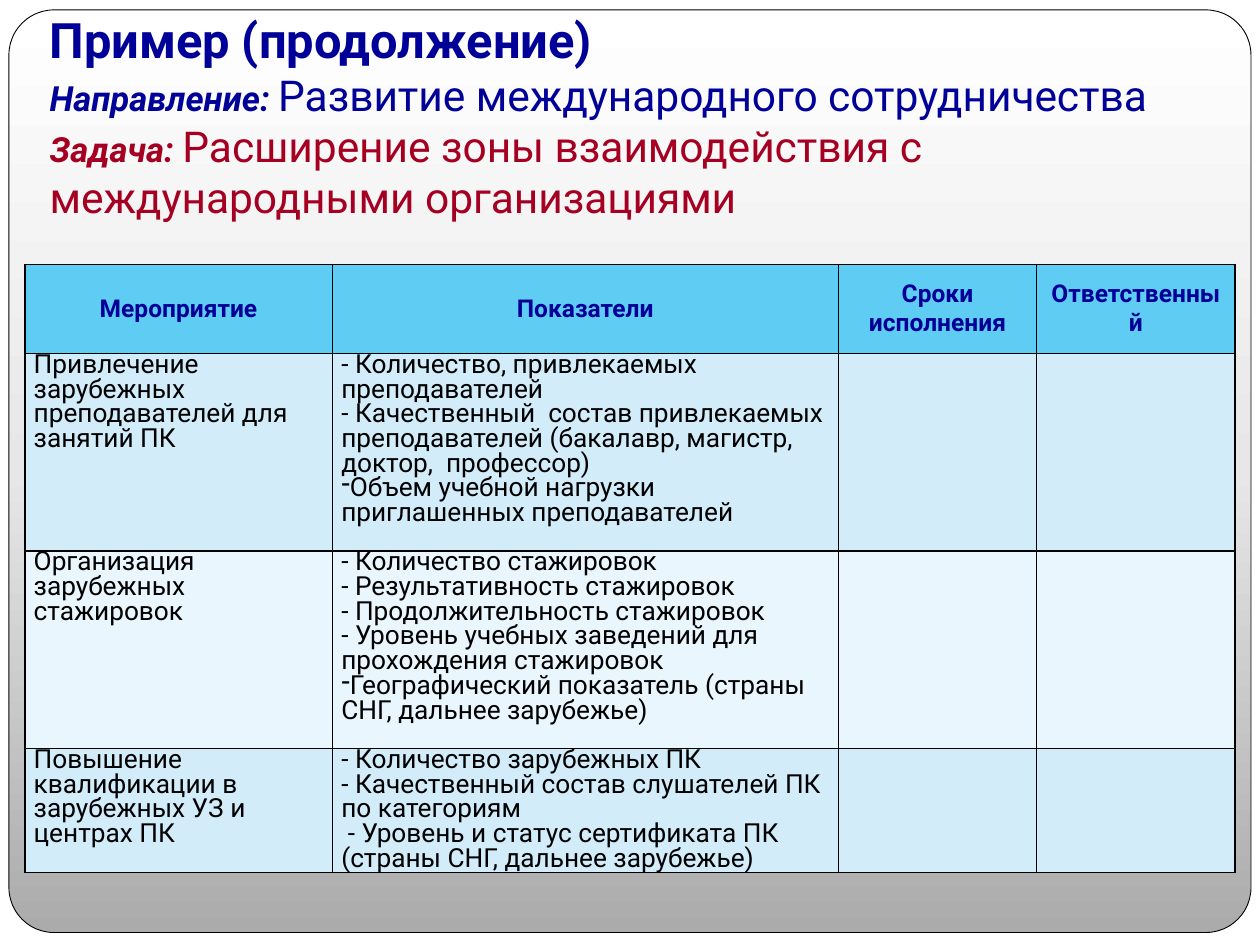
import copy
import dataclasses

import pptx
import pptx.dml.color
import pptx.enum.shapes
import pptx.enum.text
import pptx.oxml
import pptx.oxml.ns
import pptx.util
from pptx.util import Cm

PP_ALIGN = pptx.enum.text.PP_ALIGN
ANCHOR = pptx.enum.text.MSO_ANCHOR


@dataclasses.dataclass(frozen=True)
class Theme:
    font: str = "Roboto"
    navy: str = "000099"
    red: str = "A50021"
    black: str = "000000"
    white: str = "FFFFFF"
    header: str = "5ECCF3"
    bands: tuple = ("D2ECFA", "EAF6FD")
    gradient: tuple = ("ABABAB", "E7E7E7", "FFFFFF")
    title_size: float = 27.9
    label_size: float = 19.8
    topic_size: float = 24.3
    header_size: float = 14
    body_size: float = 15


THEME = Theme()


def rgb(color):
    return pptx.dml.color.RGBColor.from_string(color)


def add_text(p, text, *, size, color, bold=False, italic=False):
    r = p.add_run()
    r.text = text
    r.font.name = THEME.font
    r.font.size = pptx.util.Pt(size)
    r.font.color.rgb = rgb(color)
    r.font.bold = bold
    r.font.italic = italic
    return r


def next_paragraph(tf, index):
    return tf.add_paragraph() if index else tf.paragraphs[0]


class SlideBuilder:
    def __init__(self, prs, theme):
        self.theme = theme
        self.s = prs.slides.add_slide(prs.slide_layouts[5])
        fill = self.s.background.fill
        fill.solid()
        fill.fore_color.rgb = rgb(theme.white)

    def panel(self, left, top, width, height):
        sp = self.s.shapes.add_shape(
            pptx.enum.shapes.MSO_SHAPE.ROUNDED_RECTANGLE, left, top, width, height)
        sp.adjustments[0] = 0.049
        sp.shadow.inherit = False
        sp.line.color.rgb = rgb(self.theme.black)
        sp.line.width = pptx.util.Pt(0.5)
        sp.fill.gradient()
        sp.fill.gradient_angle = 90
        first = sp._element.spPr.find(".//" + pptx.oxml.ns.qn("a:gs"))
        first.addnext(copy.deepcopy(first))
        stops = sp.fill.gradient_stops
        for stop, position, color in zip(stops, (0, 0.5, 1), self.theme.gradient):
            stop.position = position
            stop.color.rgb = rgb(color)
        tree = self.s.shapes._spTree
        tree.remove(sp._element)
        tree.insert(2, sp._element)

    def title(self, lines, left, top, width, height):
        sp = self.s.shapes.title
        sp.left, sp.top, sp.width, sp.height = left, top, width, height
        tf = sp.text_frame
        tf.word_wrap = True
        tf.auto_size = pptx.enum.text.MSO_AUTO_SIZE.NONE
        tf.vertical_anchor = ANCHOR.BOTTOM
        tf.margin_left = tf.margin_right = 0
        tf.margin_top, tf.margin_bottom = Cm(0.13), Cm(0.25)
        for i, runs in enumerate(lines):
            p = next_paragraph(tf, i)
            p.alignment = PP_ALIGN.LEFT
            for text, style in runs:
                add_text(p, text, **style)

    def table(self, header, rows, left, top, widths, heights):
        tbl = self.s.shapes.add_table(
            len(heights), len(widths), left, top, sum(widths), sum(heights)).table
        for column, width in zip(tbl.columns, widths):
            column.width = width
        for row, height in zip(tbl.rows, heights):
            row.height = height
        for j, text in enumerate(header):
            cell = tbl.cell(0, j)
            self.cell_format(cell, self.theme.header)
            cell.vertical_anchor = ANCHOR.MIDDLE
            p = cell.text_frame.paragraphs[0]
            p.alignment = PP_ALIGN.CENTER
            add_text(p, text, size=self.theme.header_size,
                     color=self.theme.navy, bold=True)
        for i, row in enumerate(rows, 1):
            for j in range(len(widths)):
                cell = tbl.cell(i, j)
                self.cell_format(cell, self.theme.bands[(i - 1) % 2])
                self.body_text(cell, row[j] if j < len(row) else [])

    def body_text(self, cell, lines):
        cell.margin_left = cell.margin_right = Cm(0.18)
        cell.margin_top = cell.margin_bottom = 0
        for i, line in enumerate(lines):
            p = next_paragraph(cell.text_frame, i)
            p.line_spacing = 0.8
            bulleted = line.startswith("-") and not line.startswith("- ")
            if bulleted:
                pPr = p._p.get_or_add_pPr()
                pPr.set("marL", "0")
                pPr.set("indent", "0")
                bullet = pptx.oxml.parse_xml(
                    f'<a:buChar {pptx.oxml.ns.nsdecls("a")} char="-"/>')
                pPr.append(bullet)
            add_text(p, line[1:] if bulleted else line,
                     size=self.theme.body_size, color=self.theme.black)

    def cell_format(self, cell, color):
        tcPr = cell._tc.get_or_add_tcPr()
        for side in ("lnL", "lnR", "lnT", "lnB"):
            tcPr.append(pptx.oxml.parse_xml(
                f'<a:{side} {pptx.oxml.ns.nsdecls("a")} w="12700"><a:solidFill>'
                f'<a:srgbClr val="{self.theme.black}"/></a:solidFill></a:{side}>'))
        cell.fill.solid()
        cell.fill.fore_color.rgb = rgb(color)


def main():
    prs = pptx.Presentation()
    prs.slide_width, prs.slide_height = Cm(25.4), Cm(19.05)
    slide = SlideBuilder(prs, THEME)
    slide.panel(Cm(0.18), Cm(0.2), Cm(25.04), Cm(18.6))

    heading = dict(size=THEME.title_size, color=THEME.navy, bold=True)
    label = dict(size=THEME.label_size, bold=True, italic=True)
    topic = dict(size=THEME.topic_size)
    navy, red = dict(color=THEME.navy), dict(color=THEME.red)
    slide.title([
        [("Пример (продолжение)", heading)],
        [("Направление: ", label | navy),
         ("Развитие международного сотрудничества", topic | navy)],
        [("Задача: ", label | red),
         ("Расширение зоны взаимодействия с международными организациями",
          topic | red)],
    ], Cm(1), Cm(0.15), Cm(24.4), Cm(4.57))

    slide.table(
        ["Мероприятие", "Показатели", "Сроки исполнения", "Ответственный"],
        [
            (["Привлечение зарубежных преподавателей для занятий ПК"],
             ["- Количество, привлекаемых преподавателей",
              "- Качественный  состав привлекаемых преподавателей "
              "(бакалавр, магистр, доктор,  профессор)",
              "-Объем учебной нагрузки приглашенных преподавателей"]),
            (["Организация зарубежных стажировок"],
             ["- Количество стажировок",
              "- Результативность стажировок",
              "- Продолжительность стажировок",
              "- Уровень учебных заведений для прохождения стажировок",
              "-Географический показатель (страны СНГ, дальнее зарубежье)"]),
            (["Повышение квалификации в зарубежных УЗ и центрах ПК"],
             ["- Количество зарубежных ПК",
              "- Качественный состав слушателей ПК по категориям",
              " - Уровень и статус сертификата ПК (страны СНГ, дальнее зарубежье)"]),
        ],
        Cm(0.5), Cm(5.33),
        [Cm(6.2), Cm(10.2), Cm(4), Cm(4)],
        [Cm(1.8), Cm(3.98), Cm(3.98), Cm(2.5)])
    prs.save("out.pptx")


if __name__ == "__main__":
    main()
